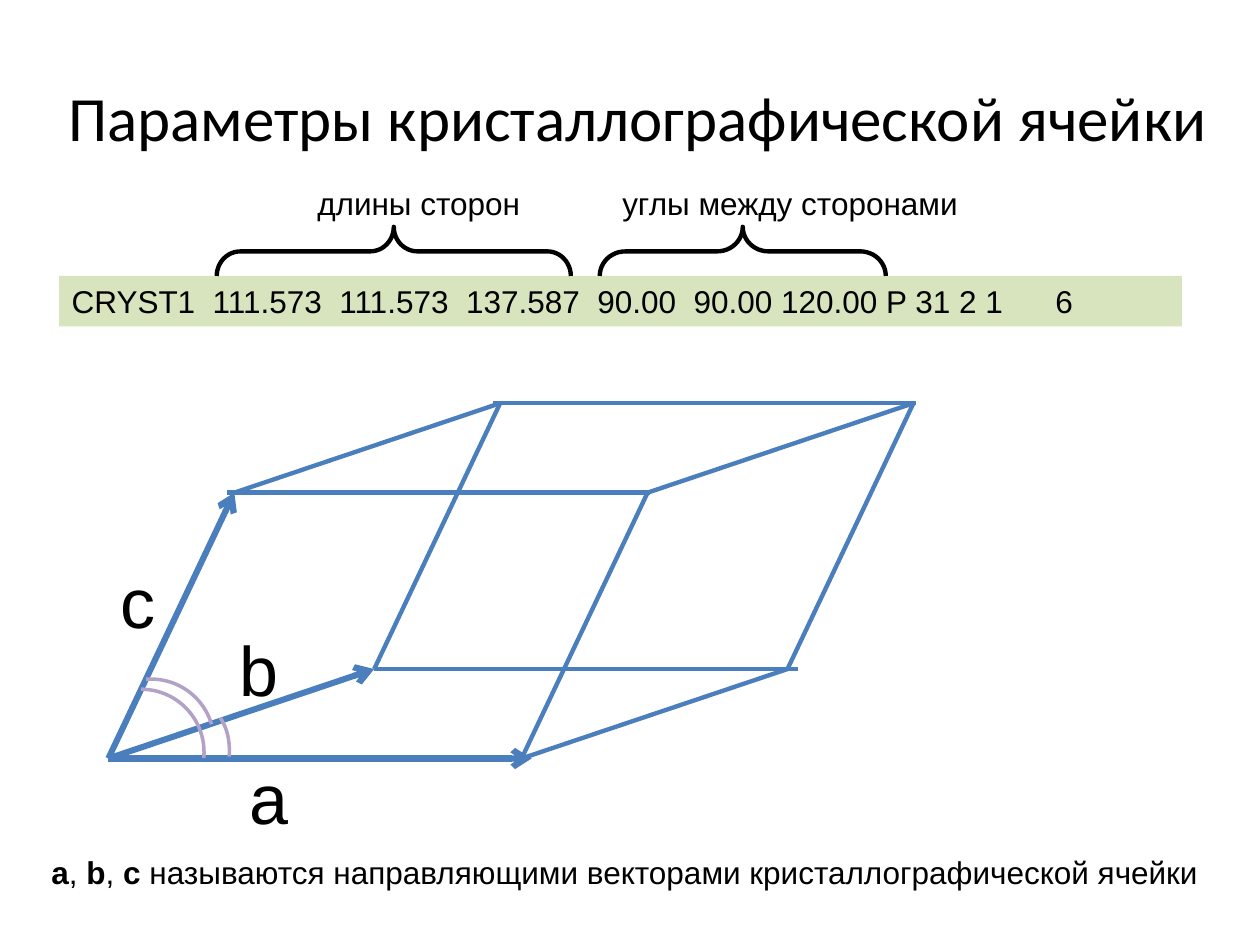
from dataclasses import dataclass
from typing import NamedTuple

from lxml import etree
from pptx import Presentation
from pptx.dml.color import RGBColor
from pptx.enum.shapes import MSO_CONNECTOR, MSO_SHAPE
from pptx.enum.text import MSO_ANCHOR, PP_ALIGN
from pptx.oxml.ns import qn
from pptx.util import Inches, Pt

STRAIGHT = MSO_CONNECTOR.STRAIGHT
RECTANGLE, BRACE, ARC = MSO_SHAPE.RECTANGLE, MSO_SHAPE.LEFT_BRACE, MSO_SHAPE.ARC
MIDDLE, TOP = MSO_ANCHOR.MIDDLE, MSO_ANCHOR.TOP
CENTER, LEFT = PP_ALIGN.CENTER, PP_ALIGN.LEFT
COLUMNS, ROWS = 100, 75
TITLE_ONLY = 5


@dataclass(frozen=True)
class Theme:
    ink: RGBColor = RGBColor(0x00, 0x00, 0x00)
    record: RGBColor = RGBColor(0xD7, 0xE4, 0xBD)
    edge: RGBColor = RGBColor(0x4B, 0x7E, 0xBC)
    angle: RGBColor = RGBColor(0xB3, 0xA2, 0xC7)
    heading_font: str = "Calibri"
    text_font: str = "Arial"
    heading_size: int = 36
    vector_size: int = 40
    text_size: int = 18
    vector_width: float = 3.5
    edge_width: float = 2.5
    angle_width: float = 2


class Box(NamedTuple):
    column: float
    row: float
    columns: float
    rows: float


class Point(NamedTuple):
    column: float
    row: float

    def moved(self, columns: float, rows: float) -> "Point":
        return Point(self.column + columns, self.row + rows)


class Run(NamedTuple):
    text: str
    bold: bool = False


class Label(NamedTuple):
    box: Box
    runs: list[Run]
    size: int
    wrap: bool


class Curve(NamedTuple):
    preset: int
    box: Box
    adjustments: tuple[float, float]
    rotation: float
    color: RGBColor
    width: float


class Edge(NamedTuple):
    start: Point
    end: Point
    is_vector: bool = False


THEME = Theme()
presentation = Presentation()
presentation.slide_width, presentation.slide_height = Inches(10), Inches(7.5)
slide = presentation.slides.add_slide(presentation.slide_layouts[TITLE_ONLY])


def across(columns: float) -> int:
    return round(presentation.slide_width * columns / COLUMNS)


def down(rows: float) -> int:
    return round(presentation.slide_height * rows / ROWS)


def place(box: Box) -> tuple[int, int, int, int]:
    return across(box.column), down(box.row), across(box.columns), down(box.rows)


def write(frame, runs: list[Run], size: int, font: str = THEME.text_font,
          align=LEFT, anchor=TOP, wrap: bool = True) -> None:
    frame.word_wrap = wrap
    frame.vertical_anchor = anchor
    paragraph = frame.paragraphs[0]
    paragraph.alignment = align
    for part in runs:
        run = paragraph.add_run()
        run.text = part.text
        run.font.name, run.font.size = font, Pt(size)
        run.font.bold = part.bold
        run.font.color.rgb = THEME.ink


def draw_label(label: Label) -> None:
    caption = slide.shapes.add_textbox(*place(label.box))
    write(caption.text_frame, label.runs, label.size, wrap=label.wrap)


def draw_curve(curve: Curve) -> None:
    outline = slide.shapes.add_shape(curve.preset, *place(curve.box))
    outline.shadow.inherit = False
    outline.fill.background()
    outline.line.color.rgb = curve.color
    outline.line.width = Pt(curve.width)
    outline.rotation = curve.rotation
    for index, value in enumerate(curve.adjustments):
        outline.adjustments[index] = value


def draw_edge(edge: Edge) -> None:
    side = slide.shapes.add_connector(
        STRAIGHT, across(edge.start.column), down(edge.start.row),
        across(edge.end.column), down(edge.end.row))
    side.line.color.rgb = THEME.edge
    side.line.width = Pt(THEME.vector_width if edge.is_vector else THEME.edge_width)
    if edge.is_vector:
        etree.SubElement(side.line._get_or_add_ln(), qn("a:tailEnd"), type="arrow")
    etree.SubElement(side._element.spPr, qn("a:effectLst"))


def cell_edges() -> list[Edge]:
    origin = Point(8.6, 60.2)
    a, b, c = (32.8, 0), (21.1, -7.1), (10, -21.1)
    reach, overlap = (33.6, 0), (-0.6, 0)
    at_a, at_b, at_c = (origin.moved(*vector) for vector in (a, b, c))
    at_ab, at_ac, at_bc = at_a.moved(*b), at_a.moved(*c), at_b.moved(*c)
    at_abc = at_ab.moved(*c)
    vectors = [Edge(origin, end, True) for end in (origin.moved(*reach), at_b, at_c)]
    starts = at_b, at_c.moved(*overlap), at_bc.moved(*overlap)
    parallel_to_a = [Edge(start, start.moved(*reach)) for start in starts]
    others = [(at_c, at_bc), (at_ac, at_abc), (at_a, at_ab),
              (at_a, at_ac), (at_ab, at_abc), (at_b, at_bc)]
    return vectors + parallel_to_a + [Edge(*ends) for ends in others]


def main() -> None:
    heading = slide.shapes.title
    heading.left, heading.top, heading.width, heading.height = place(Box(3.9, 3, 93.4, 12.5))
    write(heading.text_frame, [Run("Параметры кристаллографической ячейки")],
          THEME.heading_size, THEME.heading_font, CENTER, MIDDLE)

    record = slide.shapes.add_shape(RECTANGLE, *place(Box(4.7, 21.9, 89.1, 4)))
    record.shadow.inherit = False
    record.fill.solid()
    record.fill.fore_color.rgb = THEME.record
    record.line.fill.background()
    write(record.text_frame,
          [Run("CRYST1  111.573  111.573  137.587  90.00  90.00 120.00 P 31 2 1      6")],
          THEME.text_size)

    for box, adjustments in ((Box(29.3, 5.9, 3.9, 28.1), (0.48, 0.5)),
                             (Box(57, 8.6, 3.9, 22.7), (0.52, 0.5))):
        draw_curve(Curve(BRACE, box, adjustments, 90, THEME.ink, THEME.edge_width))

    for box, text in ((Box(24.2, 14.1, 18.3, 4), "длины сторон"),
                      (Box(48.4, 14.1, 28.9, 4), "углы между сторонами")):
        draw_label(Label(box, [Run(text)], THEME.text_size, False))

    for edge in cell_edges():
        draw_edge(edge)

    for name, column, row in (("a", 18.8, 59.4), ("c", 8.6, 43.8), ("b", 18, 49.2)):
        draw_label(Label(Box(column, row, 5.5, 7.7), [Run(name)], THEME.vector_size, True))

    for box, sweep, rotation in ((Box(6.2, 54.7, 10, 10), (162, 3.23), 0),
                                 (Box(7, 53.9, 10, 10), (159.29, 206.11), 0),
                                 (Box(10.8, 55.6, 7.2, 10), (173.78, 198.74), 20.6)):
        draw_curve(Curve(ARC, box, sweep, rotation, THEME.angle, THEME.angle_width))

    definition = [Run("a", True), Run(", "), Run("b", True), Run(", "), Run("c ", True),
                  Run("называются направляющими векторами кристаллографической ячейки")]
    draw_label(Label(Box(3.1, 67.2, 95, 4), definition, THEME.text_size, False))

    presentation.save("out.pptx")


if __name__ == "__main__":
    main()
